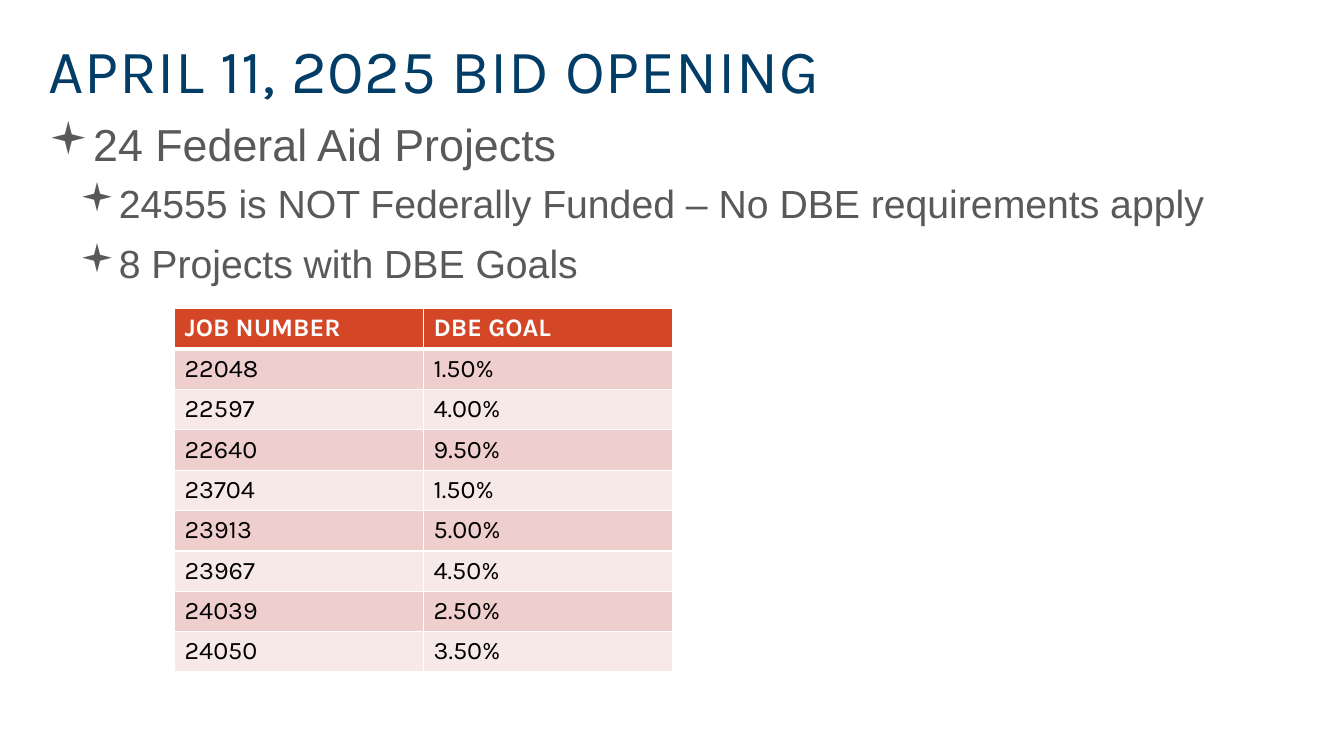
from lxml.etree import SubElement
from pptx import Presentation
from pptx.dml.color import RGBColor
from pptx.enum.text import MSO_ANCHOR
from pptx.oxml.ns import qn
from pptx.util import Cm, Pt

NAVY = RGBColor(0x02, 0x3D, 0x67)
GRAY = RGBColor(0x59, 0x59, 0x59)
ORANGE = RGBColor(0xD3, 0x47, 0x27)
ROSE = RGBColor(0xEF, 0xCF, 0xCD)
PALE_ROSE = RGBColor(0xF7, 0xE9, 0xE8)
WHITE = RGBColor(0xFF, 0xFF, 0xFF)
BLACK = RGBColor(0x00, 0x00, 0x00)


def style_font(paragraph, name, size, color):
    paragraph.font.name = name
    paragraph.font.size = Pt(size)
    paragraph.font.color.rgb = color


def add_border(cell, side, width):
    """Draw a white line along one side (lnL, lnR, lnT or lnB) of a cell."""
    line = SubElement(cell_properties := cell._tc.get_or_add_tcPr(), qn(f"a:{side}"), w=str(Pt(width)))
    fill = SubElement(line, qn("a:solidFill"))
    SubElement(fill, qn("a:srgbClr"), val=str(WHITE))


presentation = Presentation()
presentation.slide_width = Cm(33.87)
presentation.slide_height = Cm(19.05)
slide = presentation.slides.add_slide(presentation.slide_layouts[6])

# Title
title = slide.shapes.add_textbox(Cm(0.97), Cm(0.2), Cm(31.62), Cm(2.62)).text_frame
title.word_wrap = True
title.vertical_anchor = MSO_ANCHOR.BOTTOM
paragraph = title.paragraphs[0]
paragraph.line_spacing = 0.9
run = paragraph.add_run()
run.text = "APRIL 11, 2025 BID OPENING"
style_font(paragraph, "Karla", 44, NAVY)
run._r.get_or_add_rPr().set("spc", "50")

# Bulleted list
bullets = [
    ("24 Federal Aid Projects", 0, 32, 6),
    ("24555 is NOT Federally Funded – No DBE requirements apply", 1, 28, 9.6),
    ("8 Projects with DBE Goals", 1, 28, 9.6),
]
indent = Cm(0.79)
body = slide.shapes.add_textbox(Cm(0.97), Cm(2.82), Cm(30.43), Cm(14.55)).text_frame
body.word_wrap = True
for index, (text, level, size, space_after) in enumerate(bullets):
    paragraph = body.add_paragraph() if index else body.paragraphs[0]
    paragraph.text = text
    paragraph.level = level
    paragraph.space_after = Pt(space_after)
    properties = paragraph._p.get_or_add_pPr()
    properties.set("marL", str(indent * (level + 1)))
    properties.set("indent", str(-indent))
    SubElement(properties, qn("a:buFont"), typeface="Wingdings")
    SubElement(properties, qn("a:buChar"), char="▪")
    style_font(paragraph, "Arial", size, GRAY)

# Goals by job
rows = [
    ("JOB NUMBER", "DBE GOAL"),
    ("22048", "1.50%"),
    ("22597", "4.00%"),
    ("22640", "9.50%"),
    ("23704", "1.50%"),
    ("23913", "5.00%"),
    ("23967", "4.50%"),
    ("24039", "2.50%"),
    ("24050", "3.50%"),
]
table = slide.shapes.add_table(len(rows), 2, Cm(4.4), Cm(7.78), Cm(12.55), Cm(len(rows))).table
for row_index, row in enumerate(rows):
    is_header = row_index == 0
    for column_index, text in enumerate(row):
        cell = table.cell(row_index, column_index)
        cell.text = text
        paragraph = cell.text_frame.paragraphs[0]
        style_font(paragraph, "Karla", 18, WHITE if is_header else BLACK)
        paragraph.font.bold = is_header
        for side in ("lnL", "lnR", "lnT", "lnB"):
            header_rule = (row_index, side) in ((0, "lnB"), (1, "lnT"))
            add_border(cell, side, 3 if header_rule else 1)
        cell.fill.solid()
        cell.fill.fore_color.rgb = ORANGE if is_header else ROSE if row_index % 2 else PALE_ROSE

presentation.save("out.pptx")
